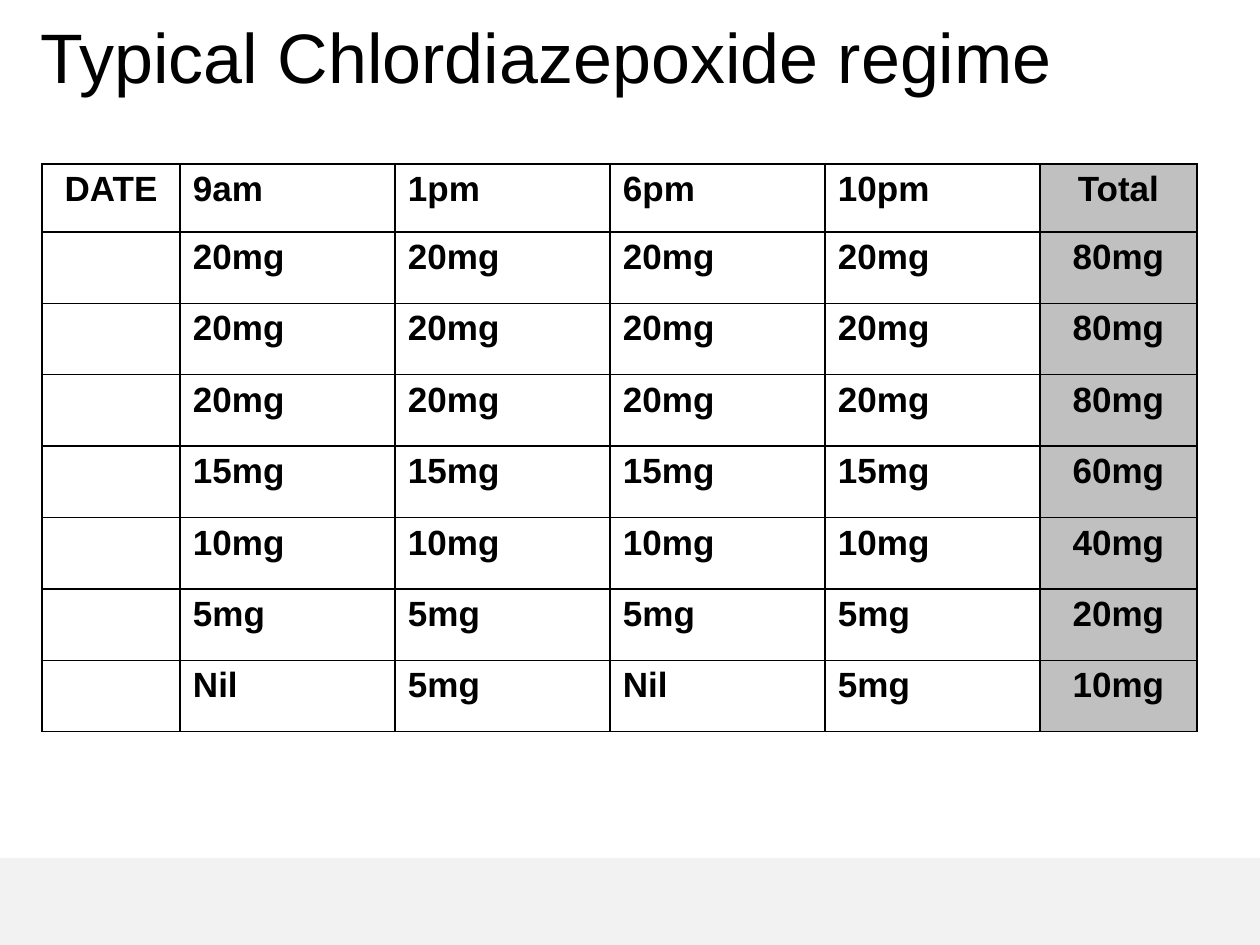
from lxml.etree import SubElement
from pptx import Presentation
from pptx.dml.color import RGBColor
from pptx.enum.shapes import MSO_SHAPE as Shape
from pptx.enum.text import MSO_ANCHOR as Anchor, PP_ALIGN as Align
from pptx.oxml.ns import qn
from pptx.util import Pt

TITLE = "Typical Chlordiazepoxide regime"
HEADER = ["DATE", "9am", "1pm", "6pm", "10pm", "Total"]
DOSES = [
    ["20mg", "20mg", "20mg", "20mg", "80mg"],
    ["20mg", "20mg", "20mg", "20mg", "80mg"],
    ["20mg", "20mg", "20mg", "20mg", "80mg"],
    ["15mg", "15mg", "15mg", "15mg", "60mg"],
    ["10mg", "10mg", "10mg", "10mg", "40mg"],
    ["5mg", "5mg", "5mg", "5mg", "20mg"],
    ["Nil", "5mg", "Nil", "5mg", "10mg"],
]
ROWS = [HEADER] + [[""] + doses for doses in DOSES]
COL_WIDTHS = [138] + [215] * 4 + [157]
TABLE_HEIGHT, HEADER_HEIGHT = 568, 68
DOSE_HEIGHT = (TABLE_HEIGHT - HEADER_HEIGHT) / len(DOSES)
BLACK, GREY, BAND = "000000", "C0C0C0", "F2F2F2"


def px(n):
    return round(n * 914400 / 126)


def color(value):
    return RGBColor.from_string(value)


def set_font(p, size, bold=False):
    p.font.name = "Arial"
    p.font.size = Pt(size)
    p.font.bold = bold
    p.font.color.rgb = color(BLACK)


def add_borders(cell):
    tc_pr = cell._tc.get_or_add_tcPr()
    for side in "LRTB":
        ln = SubElement(tc_pr, qn(f"a:ln{side}"), w=str(Pt(1)))
        fill = SubElement(ln, qn("a:solidFill"))
        SubElement(fill, qn("a:srgbClr"), val=BLACK)


def fill_cell(cell, text, centred, shaded):
    add_borders(cell)
    if shaded:
        cell.fill.solid()
        cell.fill.fore_color.rgb = color(GREY)
    else:
        cell.fill.background()
    cell.margin_left = cell.margin_right = px(13)
    cell.margin_top = cell.margin_bottom = px(6)
    p = cell.text_frame.paragraphs[0]
    p.text = text
    p.alignment = Align.CENTER if centred else Align.LEFT
    p_pr = p._p.get_or_add_pPr()
    p_pr.set("marL", str(px(48)))
    p_pr.set("indent", str(px(-48)))
    set_font(p, 20, True)


def main():
    prs = Presentation()
    prs.slide_width, prs.slide_height = px(1260), px(945)
    slide = prs.slides.add_slide(prs.slide_layouts[5])

    band = slide.shapes.add_shape(Shape.RECTANGLE, 0, px(858), px(1260), px(87))
    band.shadow.inherit = False
    band.fill.solid()
    band.fill.fore_color.rgb = color(BAND)
    band.line.fill.background()

    title = slide.shapes.title
    title.left, title.top, title.width, title.height = 0, px(1), px(1092), px(67)
    tf = title.text_frame
    tf.text = TITLE
    tf.word_wrap = True
    tf.vertical_anchor = Anchor.TOP
    tf.margin_top, tf.margin_bottom = px(13), 0
    p = tf.paragraphs[0]
    p.alignment = Align.CENTER
    set_font(p, 40)

    table = slide.shapes.add_table(
        len(ROWS), len(HEADER), px(42), px(164), px(sum(COL_WIDTHS)), px(TABLE_HEIGHT)
    ).table
    table.first_row = table.horz_banding = False
    for column, width in zip(table.columns, COL_WIDTHS):
        column.width = px(width)
    last = len(HEADER) - 1
    for r, texts in enumerate(ROWS):
        table.rows[r].height = px(DOSE_HEIGHT if r else HEADER_HEIGHT)
        for c, text in enumerate(texts):
            fill_cell(table.cell(r, c), text, c in (0, last), c == last)

    prs.save("out.pptx")


if __name__ == "__main__":
    main()
